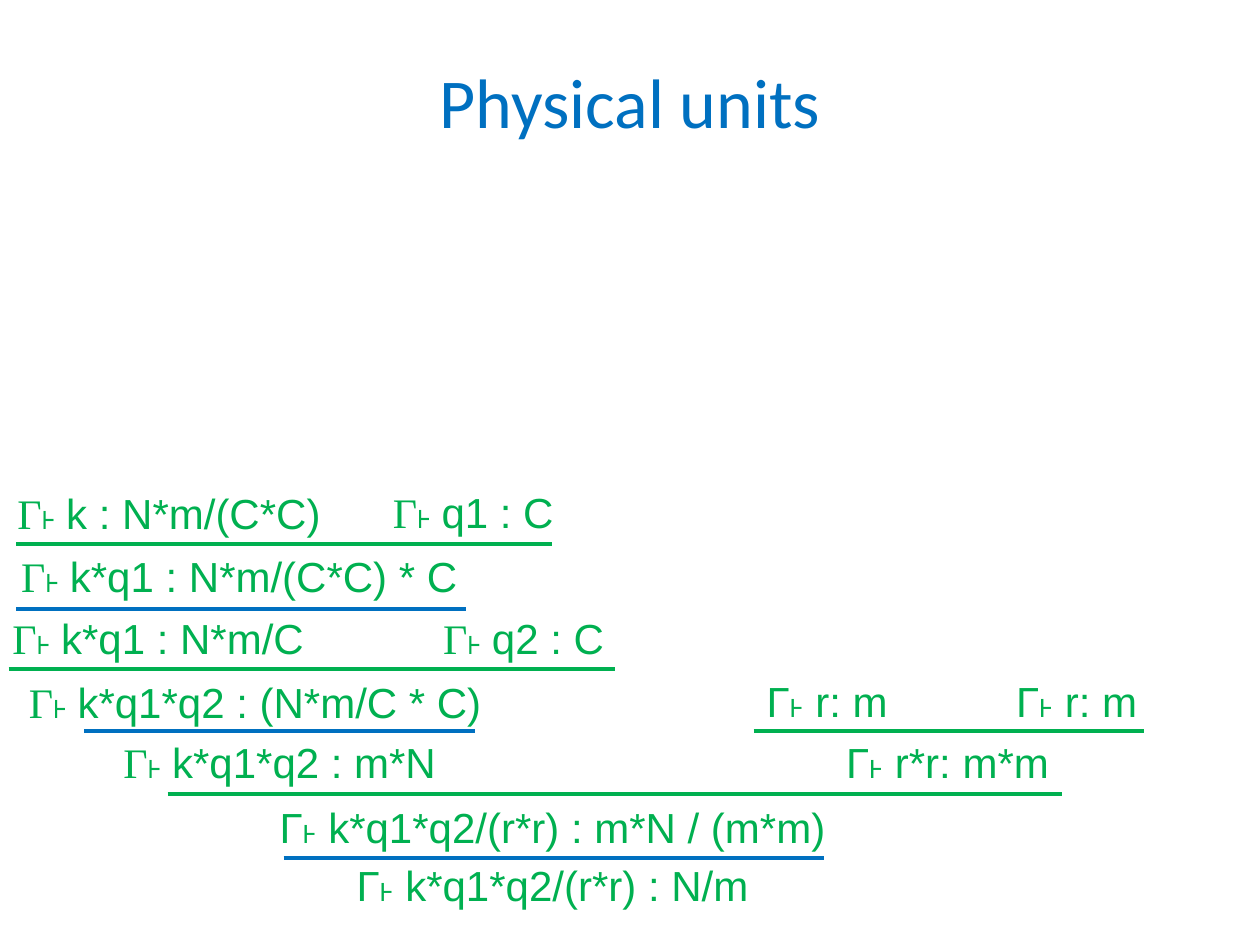
from dataclasses import dataclass

from lxml import etree
from pptx import Presentation
from pptx.dml.color import RGBColor
from pptx.enum.shapes import MSO_CONNECTOR
from pptx.enum.text import MSO_ANCHOR, MSO_AUTO_SIZE, PP_ALIGN
from pptx.oxml.ns import qn
from pptx.slide import Slide
from pptx.util import Pt

LEFT, CENTER = PP_ALIGN.LEFT, PP_ALIGN.CENTER
MIDDLE = MSO_ANCHOR.MIDDLE
GROW = MSO_AUTO_SIZE.SHAPE_TO_FIT_TEXT
STRAIGHT = MSO_CONNECTOR.STRAIGHT

TURNSTILE = "Γ˫ "
SERIF, SANS = "Times New Roman", "Arial"

# left, top, width, alignment, font of the turnstile, judgement
JUDGEMENTS = [
    (2.9, 275, 274.3, LEFT, SERIF, "k : N*m/(C*C)"),
    (217.4, 274.3, 109.4, LEFT, SERIF, "q1 : C"),
    (5, 311, 274.3, LEFT, SERIF, "k*q1 : N*m/(C*C) * C"),
    (0, 346.5, 227.5, LEFT, SERIF, "k*q1 : N*m/C"),
    (246.2, 346.3, 110.9, LEFT, SERIF, "q2 : C"),
    (5, 383, 281.5, CENTER, SERIF, "k*q1*q2 : (N*m/C * C)"),
    (411.8, 382.5, 121.7, CENTER, SANS, "r: m"),
    (554.4, 382.3, 121.7, CENTER, SANS, "r: m"),
    (48.2, 417.6, 223.2, CENTER, SERIF, "k*q1*q2 : m*N"),
    (450, 417.6, 182.9, CENTER, SANS, "r*r: m*m"),
    (134.6, 454.3, 362.2, CENTER, SANS, "k*q1*q2/(r*r) : m*N / (m*m)"),
    (134.6, 487.6, 362.2, CENTER, SANS, "k*q1*q2/(r*r) : N/m"),
]


def color(hex_value):
    return RGBColor.from_string(hex_value)


@dataclass
class ProofSlide:
    slide: Slide
    blue: str = "0070C0"
    green: str = "00B050"
    line_width: float = 2.25

    def text_box(self, left, top, width, height, align, size, hex_value):
        """Add an empty wrapped text box; return its frame and paragraph."""
        box = self.slide.shapes.add_textbox(Pt(left), Pt(top), Pt(width), Pt(height))
        frame = box.text_frame
        frame.word_wrap = True
        paragraph = frame.paragraphs[0]
        paragraph.alignment = align
        paragraph.font.size = Pt(size)
        paragraph.font.color.rgb = color(hex_value)
        return frame, paragraph

    def title(self, text):
        frame, paragraph = self.text_box(36, 12.2, 648, 90, CENTER, 40, self.blue)
        frame.vertical_anchor = MIDDLE
        paragraph.font.name = "Calibri"
        paragraph.add_run().text = text

    def judgement(self, left, top, width, align, turnstile_font, text):
        frame, paragraph = self.text_box(left, top, width, 36, align, 24, self.green)
        frame.auto_size = GROW
        if turnstile_font == SANS:
            paragraph.font.name = SANS
            paragraph.add_run().text = TURNSTILE + text
            return
        for part, font in ((TURNSTILE, turnstile_font), (text, SANS)):
            run = paragraph.add_run()
            run.text = part
            run.font.name = font

    def rule(self, left, right, y, hex_value):
        """Draw the horizontal bar of one inference step."""
        line = self.slide.shapes.add_connector(STRAIGHT, Pt(left), Pt(y), Pt(right), Pt(y))
        line.line.color.rgb = color(hex_value)
        line.line.width = Pt(self.line_width)
        etree.SubElement(line._element.spPr, qn("a:effectLst"))


def main():
    presentation = Presentation()
    presentation.slide_width, presentation.slide_height = Pt(720), Pt(540)
    proof = ProofSlide(presentation.slides.add_slide(presentation.slide_layouts[6]))

    proof.title("Physical units")
    for judgement in JUDGEMENTS:
        proof.judgement(*judgement)

    # Green bars apply a typing rule, blue bars simplify a unit.
    for left, right, y in [(9.4, 315.4, 311), (5, 351.4, 382.3),
                           (430.6, 653.8, 417.6), (95.8, 607, 453.6)]:
        proof.rule(left, right, y, proof.green)
    for left, right, y in [(9.4, 266.4, 348), (48.2, 271.4, 417.6), (162, 470.9, 490.3)]:
        proof.rule(left, right, y, proof.blue)

    presentation.save("out.pptx")


if __name__ == "__main__":
    main()
